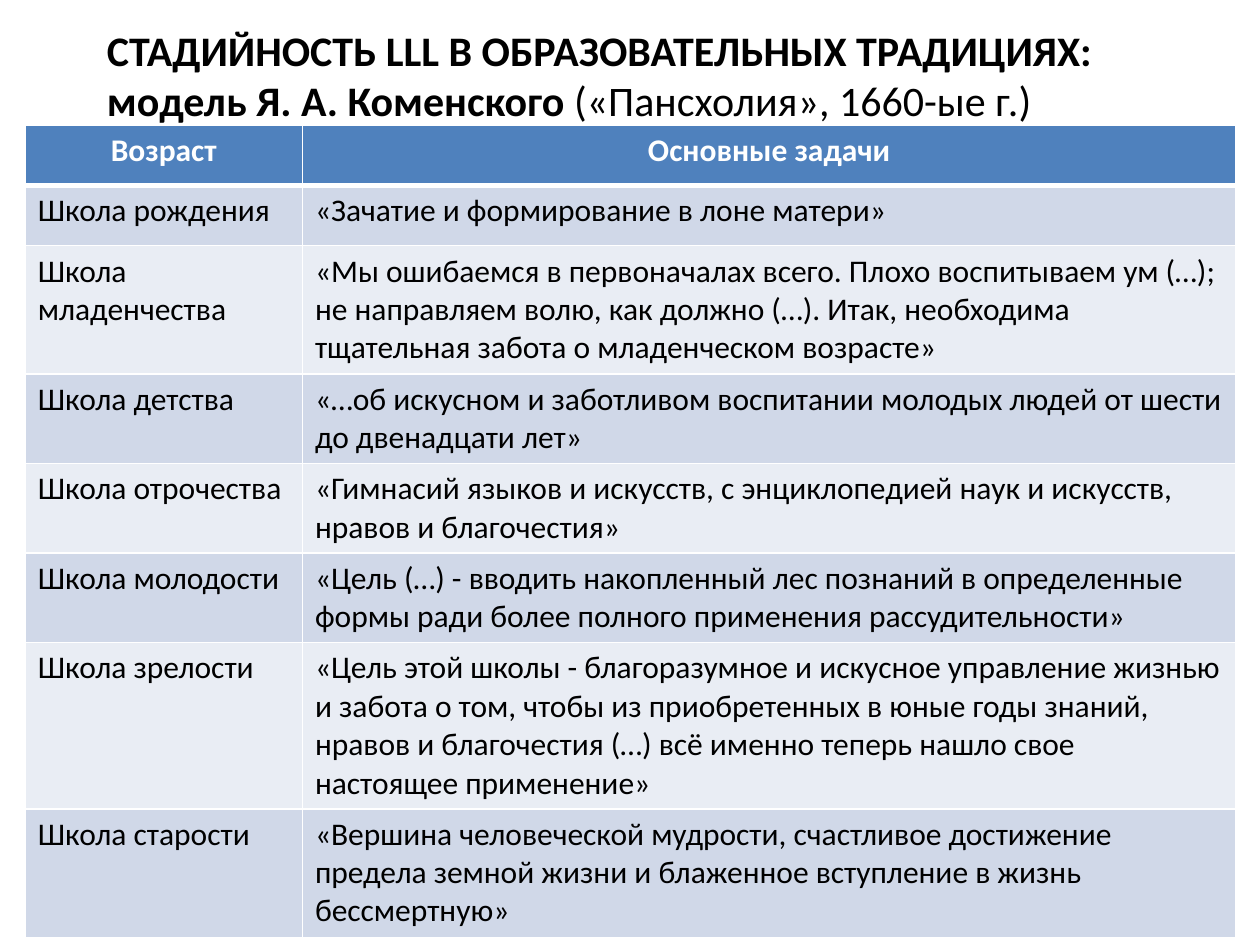
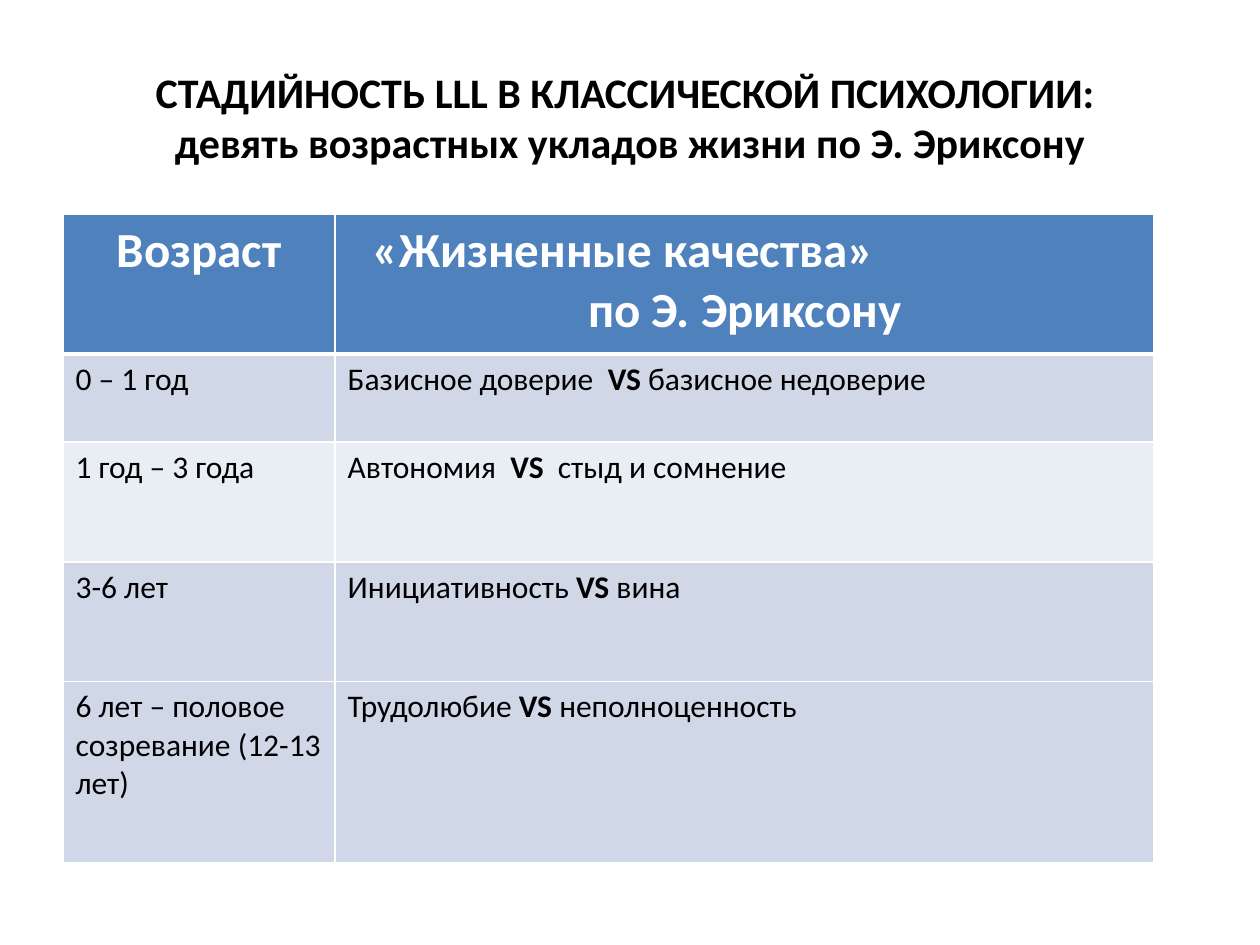
from itertools import chain, cycle

from pptx import Presentation
from pptx.dml.color import RGBColor as Rgb
from pptx.enum.text import MSO_ANCHOR as Anchor, PP_ALIGN as Align
from pptx.oxml.xmlchemy import OxmlElement as Node
from pptx.util import Inches, Pt

FONT = "Calibri"
BLACK, WHITE = "000000", "FFFFFF"
HEAD, DARK, LIGHT = "4F81BD", "D0D8E8", "E9EDF4"
COLS, ROWS = 100, 75  # the slide's grid
UNIT = Inches(0.1)
TITLE_SIZE, BODY_SIZE = 24, 18

SCHOOLS = [
    ("Школа рождения", "«Зачатие и формирование в лоне матери»"),
    ("Школа младенчества",
     "«Мы ошибаемся в первоначалах всего. Плохо воспитываем ум (…); не направляем волю, "
     "как должно (…). Итак, необходима тщательная забота о младенческом возрасте»"),
    ("Школа детства",
     "«…об искусном и заботливом воспитании молодых людей от шести до двенадцати лет»"),
    ("Школа отрочества",
     "«Гимнасий языков и искусств, с энциклопедией наук и искусств, нравов и благочестия»"),
    ("Школа молодости",
     "«Цель (…) - вводить накопленный лес познаний в определенные формы ради более "
     "полного применения рассудительности»"),
    ("Школа зрелости",
     "«Цель этой школы - благоразумное и искусное управление жизнью и забота о том, чтобы "
     "из приобретенных в юные годы знаний, нравов и благочестия (…) всё именно теперь "
     "нашло свое настоящее применение»"),
    ("Школа старости",
     "«Вершина человеческой мудрости, счастливое достижение предела земной жизни и "
     "блаженное вступление в жизнь бессмертную»"),
]
STAGES = [
    ("0 – 1 год", "Базисное доверие  *VS* базисное недоверие"),
    ("1 год – 3 года", "Автономия  *VS * стыд и сомнение"),
    ("3-6 лет", "Инициативность *VS *вина"),
    ("6 лет – половое созревание (12-13 лет)", "Трудолюбие *VS* неполноценность"),
]


def grid(*spans):
    return [int(UNIT * span) for span in spans]


def color(code):
    return Rgb.from_string(code)


def write(para, text, size, ink=BLACK):
    """Add the runs of a text in which *stars* enclose the bold parts."""
    for part, bold in zip(text.split("*"), cycle((False, True))):
        if part:
            run = para.add_run()
            run.text = part
            font = run.font
            font.name, font.size, font.bold = FONT, Pt(size), bold
            font.color.rgb = color(ink)


def add_title(slide, spot, lines, align):
    frame = slide.shapes.add_textbox(*grid(*spot)).text_frame
    frame.word_wrap = True
    frame.vertical_anchor = Anchor.MIDDLE
    para = frame.paragraphs[0]
    para.alignment = align
    for i, line in enumerate(lines):
        if i:
            para.add_line_break()
        write(para, line, TITLE_SIZE)


def add_edges(cell, top, base):
    props = cell._tc.get_or_add_tcPr()
    for side, width in zip("LRTB", (1, 1, top, base)):
        line = Node(f"a:ln{side}")
        line.set("w", str(int(Pt(width))))
        fill = Node("a:solidFill")
        tint = Node("a:srgbClr")
        tint.set("val", WHITE)
        fill.append(tint)
        line.append(fill)
        props.append(line)


def paint(cell, row, fill):
    """Edge and fill a cell; a thick rule parts the head from the body."""
    add_edges(cell, 3 if row == 1 else 1, 3 if row == 0 else 1)
    cell.fill.solid()
    cell.fill.fore_color.rgb = color(fill)


def add_table(slide, left, top, widths, heights, heads, body, fills, size):
    spot = grid(left, top, sum(widths), sum(heights))
    table = slide.shapes.add_table(len(heights), len(widths), *spot).table
    for col, width in zip(table.columns, grid(*widths)):
        col.width = width
    for row, height in zip(table.rows, grid(*heights)):
        row.height = height
    for r, (texts, fill) in enumerate(zip([heads, *body], chain([HEAD], fills))):
        for c, text in enumerate(texts):
            cell = table.cell(r, c)
            paint(cell, r, fill)
            para = cell.text_frame.paragraphs[0]
            if r:
                write(para, text, BODY_SIZE)
            else:
                para.alignment = Align.CENTER
                write(para, f"*{text}*", size, WHITE)
    return table


def add_line(cell, text, size, indent):
    """Shift the head's first line to the left and centre a second one below."""
    first = cell.text_frame.paragraphs[0]
    first.alignment = Align.LEFT
    first._p.get_or_add_pPr().set("marL", str(grid(indent)[0]))
    para = cell.text_frame.add_paragraph()
    para.alignment = Align.CENTER
    write(para, f"*{text}*", size, WHITE)


def add_slide(deck):
    return deck.slides.add_slide(deck.slide_layouts[6])


def main():
    deck = Presentation()
    deck.slide_width, deck.slide_height = grid(COLS, ROWS)

    slide = add_slide(deck)
    add_title(slide, (7.5, 1.3, 90, 9.3),
              ("*СТАДИЙНОСТЬ LLL В ОБРАЗОВАТЕЛЬНЫХ ТРАДИЦИЯХ:*",
               "*модель Я. А. Коменского *(«Пансхолия», 1660-ые г.)"), Align.LEFT)
    tall = {1: 4.8, 2: 7.1, 3: 10.2, 4: 13.2}  # row height by lines of text
    add_table(slide, 2, 9.9, (22, 74.1), [tall[n] for n in (1, 1, 3, 2, 2, 2, 4, 3)],
              ("Возраст", "Основные задачи"), SCHOOLS, cycle((DARK, LIGHT)), BODY_SIZE)

    slide = add_slide(deck)
    add_title(slide, (5, 3, 90, 12.5),
              ("*СТАДИЙНОСТЬ LLL В КЛАССИЧЕСКОЙ ПСИХОЛОГИИ: *",
               "*девять возрастных укладов жизни по Э. Эриксону*"), Align.CENTER)
    big = 28
    table = add_table(slide, 5, 17, (21.6, 65), (11.1, 7, 9.5, 9.5, 14.4),
                      ("Возраст", "«Жизненные качества»"), STAGES,
                      (DARK, LIGHT, DARK, DARK), big)
    add_line(table.cell(0, 1), "по Э. Эриксону", big, 2)

    deck.save("out.pptx")


if __name__ == "__main__":
    main()
